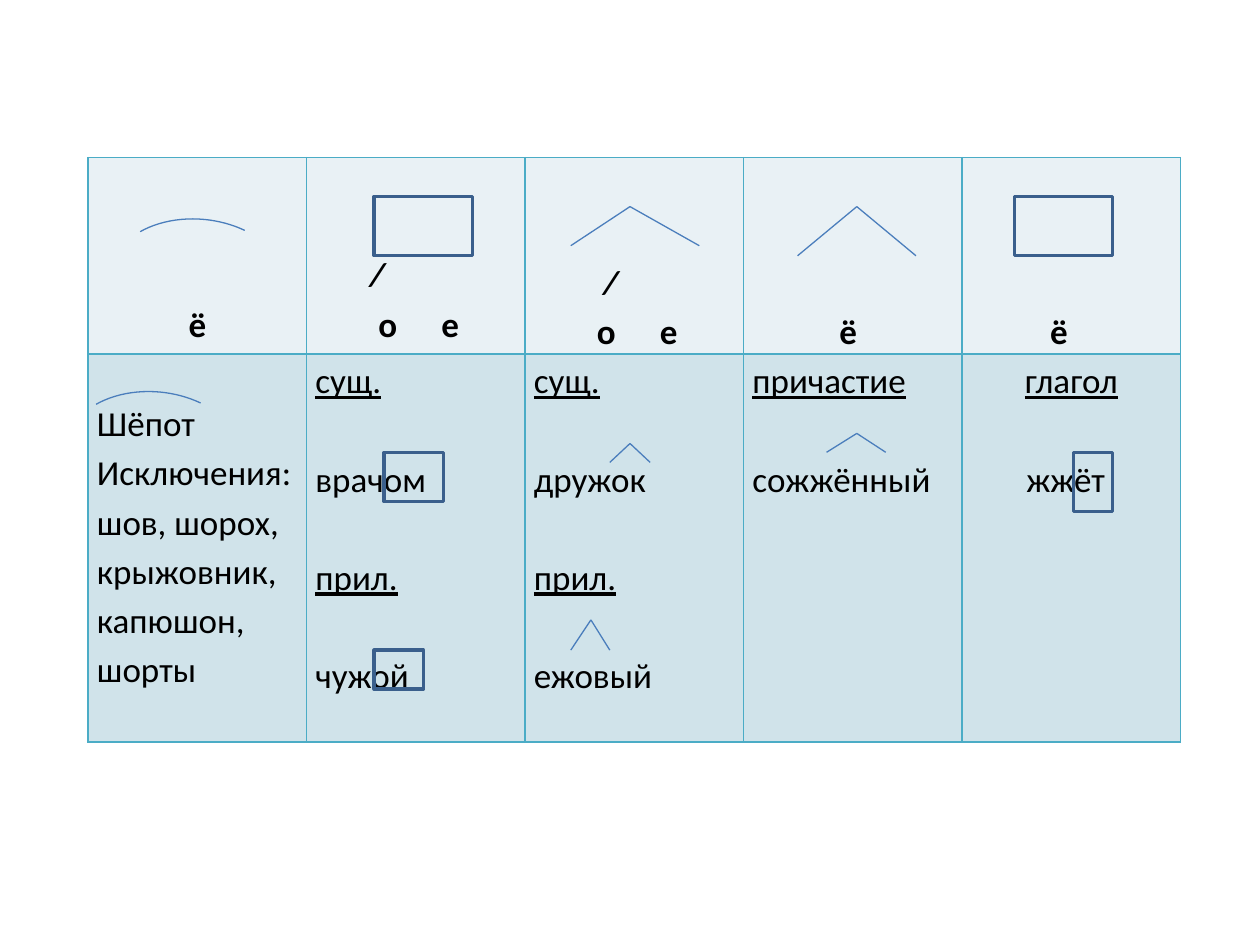
import lxml.etree
import pptx
import pptx.dml.color
import pptx.enum.shapes
import pptx.enum.text
import pptx.oxml
import pptx.oxml.ns
import pptx.util

SLIDE_WIDTH, SLIDE_HEIGHT = 10, 7.5
TABLE_LEFT, TABLE_TOP, TABLE_WIDTH = 0.7, 1.25, 8.67
ROW_HEIGHTS = [1.56, 3.08]
ROW_FILLS = ["E9F1F5", "D0E3EA"]
BORDER, THIN_LINE, ENDING_LINE = "4BACC6", "4B7EBC", "3A5F8C"
LINE_STEP = 28

LEFT = pptx.enum.text.PP_ALIGN.LEFT
CENTER = pptx.enum.text.PP_ALIGN.CENTER
TOP = pptx.enum.text.MSO_ANCHOR.TOP
BOTTOM = pptx.enum.text.MSO_ANCHOR.BOTTOM

HEADS = [
    {"bottom": 0.06, "lines": [{"text": "ё", "align": CENTER}]},
    {"bottom": 0.06, "lines": [{"text": "∕", "indent": 0.44},
                               {"text": "\tо\tе", "tabs": [0.31, 0.9]}]},
    {"lines": [{"text": "∕", "indent": 0.56},
               {"text": "\tо\tе", "tabs": [0.44, 1.03]}]},
    {"lines": [{"text": "ё", "indent": 0.69}]},
    {"lines": [{"text": "ё", "indent": 0.63}]},
]
EXAMPLES = [
    {"top": 0.34, "lines": [{"text": text} for text in (
        "Шёпот", "Исключения:", "шов, шорох,", "крыжовник,", "капюшон, шорты")]},
    {"lines": [{"text": "сущ.", "underline": True}, {"text": "врачом", "gap": 1},
               {"text": "прил.", "underline": True, "gap": 1}, {"text": "чужой", "gap": 1}]},
    {"lines": [{"text": "сущ.", "underline": True}, {"text": "дружок", "gap": 1},
               {"text": "прил.", "underline": True, "gap": 1}, {"text": "ежовый", "gap": 1}]},
    {"lines": [{"text": "причастие", "underline": True}, {"text": "сожжённый", "gap": 1}]},
    {"lines": [{"text": "глагол", "underline": True, "align": CENTER},
               {"text": "жжёт", "gap": 1, "indent": 0.44}]},
]

ROOT_ARCS = [(0.86, 1.74), (0.51, 3.11)]
ARC_SIZE = (1.43, 1.02)
ARC_ANGLES = (129.686, 183.357)
ENDING_BOXES = [
    (2.97, 1.56, 0.78, 0.47),
    (8.05, 1.56, 0.78, 0.47),
    (8.52, 3.59, 0.31, 0.47),
    (3.05, 3.59, 0.47, 0.39),
    (2.97, 5.16, 0.39, 0.31),
]
SUFFIX_MARKS = [
    (5, 1.64, 4.53, 5.55, 1.95),
    (6.8, 1.64, 6.33, 7.27, 2.03),
    (5, 3.52, 4.84, 5.16, 3.67),
    (4.69, 4.92, 4.53, 4.84, 5.16),
    (6.8, 3.44, 6.56, 7.03, 3.59),
]


def color(value):
    return pptx.dml.color.RGBColor.from_string(value)


def inches(*values):
    return [pptx.util.Inches(value) for value in values]


def apply(target, values):
    for name, value in values.items():
        setattr(target, name, value)


def write_line(para, line):
    properties = para._p.get_or_add_pPr()
    properties.set("marL", str(pptx.util.Inches(line.get("indent", 0))))
    properties.set("indent", "0")
    if "tabs" in line:
        stops = lxml.etree.SubElement(properties, pptx.oxml.ns.qn("a:tabLst"))
        for position in line["tabs"]:
            lxml.etree.SubElement(stops, pptx.oxml.ns.qn("a:tab"),
                                  pos=str(pptx.util.Inches(position)), algn="l")
    apply(para, {"alignment": line.get("align", LEFT), "line_spacing": 1.15})
    if "gap" in line:
        para.space_before = pptx.util.Pt(LINE_STEP * line["gap"])
    span = para.add_run()
    span.text = line["text"]
    apply(span.font, {"name": "Calibri", "size": pptx.util.Pt(20),
                      "bold": line.get("bold", False),
                      "underline": line.get("underline", False)})
    span.font.color.rgb = color("000000")


def add_borders(cell):
    properties = cell._tc.get_or_add_tcPr()
    for index, side in enumerate(("lnL", "lnR", "lnT", "lnB")):
        properties.insert(index, pptx.oxml.parse_xml(
            f'<a:{side} {pptx.oxml.ns.nsdecls("a")} w="12700"><a:solidFill>'
            f'<a:srgbClr val="{BORDER}"/></a:solidFill></a:{side}>'))


def fill_cell(cell, content, fill, anchor, bold):
    apply(cell, {"vertical_anchor": anchor,
                 "margin_left": pptx.util.Inches(0.07),
                 "margin_right": pptx.util.Inches(0.07),
                 "margin_top": pptx.util.Inches(content.get("top", 0)),
                 "margin_bottom": pptx.util.Inches(content.get("bottom", 0))})
    cell.fill.solid()
    cell.fill.fore_color.rgb = color(fill)
    add_borders(cell)
    frame = cell.text_frame
    for index, line in enumerate(content["lines"]):
        para = frame.add_paragraph() if index else frame.paragraphs[0]
        write_line(para, {"bold": bold, **line})


def add_spelling_table(page):
    table = page.shapes.add_table(
        len(ROW_HEIGHTS), len(HEADS),
        *inches(TABLE_LEFT, TABLE_TOP, TABLE_WIDTH, sum(ROW_HEIGHTS))).table
    apply(table, {"first_row": False, "horz_banding": False})
    for column in table.columns:
        column.width = pptx.util.Inches(TABLE_WIDTH / len(HEADS))
    rows = zip((HEADS, EXAMPLES), ROW_HEIGHTS, ROW_FILLS, (BOTTOM, TOP), (True, False))
    for row, (contents, height, fill, anchor, bold) in enumerate(rows):
        table.rows[row].height = pptx.util.Inches(height)
        for column, content in enumerate(contents):
            fill_cell(table.cell(row, column), content, fill, anchor, bold)


def set_line(shape, value, width):
    shape.line.color.rgb = color(value)
    shape.line.width = pptx.util.Pt(width)


def add_outline(page, kind, place, value, width):
    shape = page.shapes.add_shape(kind, *inches(*place))
    shape.shadow.inherit = False
    shape.fill.background()
    set_line(shape, value, width)
    return shape


def add_suffix_mark(page, peak_x, peak_y, left, right, base):
    for foot in (left, right):
        stroke = page.shapes.add_connector(
            pptx.enum.shapes.MSO_CONNECTOR.STRAIGHT, *inches(peak_x, peak_y, foot, base))
        set_line(stroke, THIN_LINE, 0.75)
        lxml.etree.SubElement(stroke._element.spPr, pptx.oxml.ns.qn("a:effectLst"))


def main():
    deck = pptx.Presentation()
    apply(deck, {"slide_width": pptx.util.Inches(SLIDE_WIDTH),
                 "slide_height": pptx.util.Inches(SLIDE_HEIGHT)})
    page = deck.slides.add_slide(deck.slide_layouts[6])
    add_spelling_table(page)
    shapes = pptx.enum.shapes.MSO_SHAPE
    for corner in ROOT_ARCS:
        arc = add_outline(page, shapes.ARC, corner + ARC_SIZE, THIN_LINE, 0.75)
        arc.rotation = 5.5
        for index, angle in enumerate(ARC_ANGLES):
            arc.adjustments[index] = angle
    for place in ENDING_BOXES:
        add_outline(page, shapes.RECTANGLE, place, ENDING_LINE, 2)
    for mark in SUFFIX_MARKS:
        add_suffix_mark(page, *mark)
    deck.save("out.pptx")


if __name__ == "__main__":
    main()
